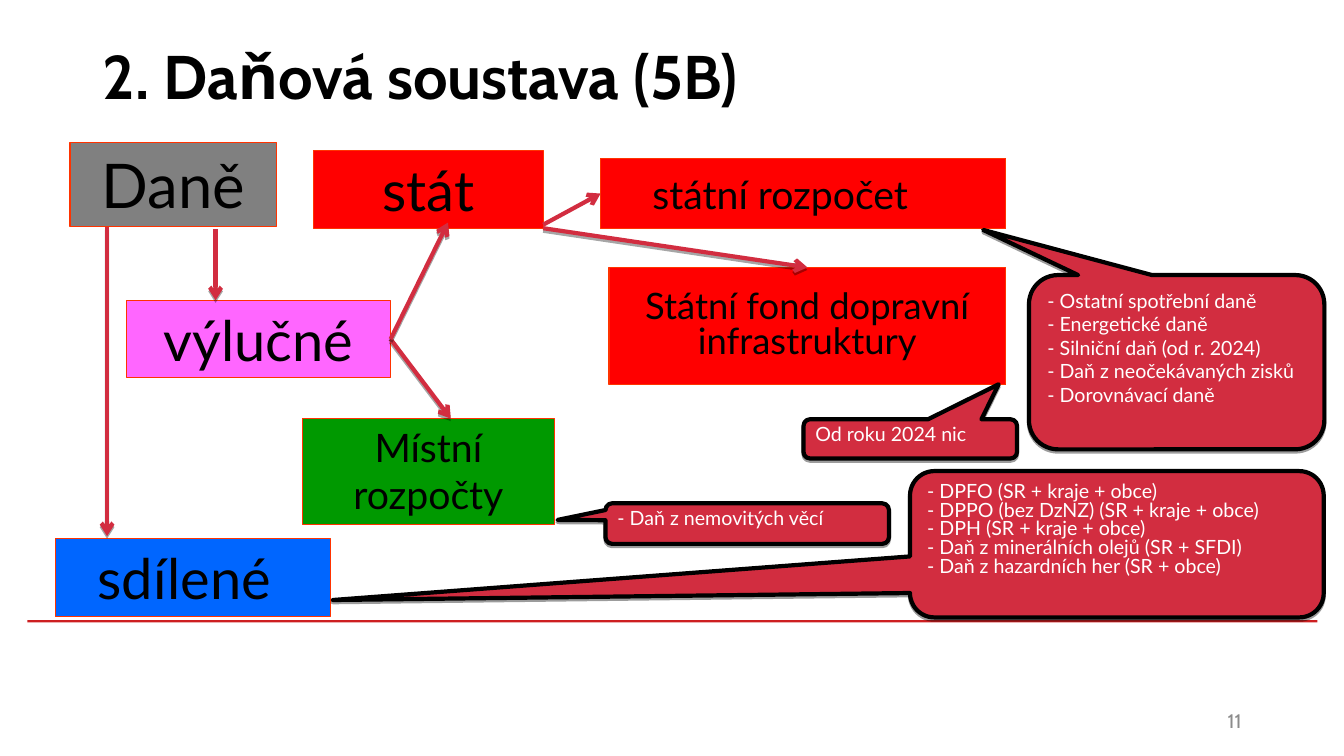
from lxml import etree
from pptx import Presentation
from pptx.dml.color import RGBColor
from pptx.enum import shapes, text
from pptx.oxml.ns import qn
from pptx.util import Pt

BLACK = RGBColor(0, 0, 0)
WHITE = RGBColor(0xFF, 0xFF, 0xFF)
GRAY = RGBColor(0x80, 0x80, 0x80)
PAGE_GRAY = RGBColor(0x8C, 0x8C, 0x8C)
RED = RGBColor(0xFF, 0, 0)
GREEN = RGBColor(0, 0x99, 0)
BLUE = RGBColor(0, 0x66, 0xFF)
PINK = RGBColor(0xFF, 0x66, 0xFF)
ORANGE = RGBColor(0xFF, 0x33, 0)
CRIMSON = RGBColor(0xD2, 0x2D, 0x40)
RULE_RED = RGBColor(0xCD, 0x1F, 0x21)


def add_effects(sp, opacity, dist):
    """Give a shape or connector a downward shadow, or none at opacity 0."""
    effects = etree.SubElement(sp._element.spPr, qn("a:effectLst"))
    if opacity:
        shadow = etree.SubElement(effects, qn("a:outerShdw"), blurRad="0",
                                  dist=str(Pt(dist)), dir="5400000", rotWithShape="0")
        color = etree.SubElement(shadow, qn("a:srgbClr"), val="000000")
        etree.SubElement(color, qn("a:alpha"), val=str(opacity * 1000))


def write(sp, lines, font, size, color, align, spacing=None, anchor=text.MSO_ANCHOR.TOP):
    tf = sp.text_frame
    tf.word_wrap = True
    tf.auto_size = text.MSO_AUTO_SIZE.NONE
    tf.vertical_anchor = anchor
    tf.text = "\n".join(lines)
    for p in tf.paragraphs:
        p.alignment = align
        p.line_spacing = spacing
        p.font.name = font
        p.font.size = Pt(size)
        p.font.color.rgb = color


prs = Presentation()
prs.slide_width, prs.slide_height = Pt(960), Pt(540)
s = prs.slides.add_slide(prs.slide_layouts[5])
LEFT, CENTER, RIGHT = text.PP_ALIGN.LEFT, text.PP_ALIGN.CENTER, text.PP_ALIGN.RIGHT
TOP, MIDDLE = text.MSO_ANCHOR.TOP, text.MSO_ANCHOR.MIDDLE

# Title
title = s.shapes.title
title.left, title.top, title.width, title.height = Pt(66), Pt(1.5), Pt(828), Pt(104.5)
write(title, ["2. Daňová soustava (5B)"], "Cabin", 44, BLACK, LEFT, anchor=MIDDLE)
title.text_frame.paragraphs[0].font.bold = True

# Footer rule and page number
rule = s.shapes.add_shape(shapes.MSO_SHAPE.RECTANGLE, Pt(19.5), Pt(443), Pt(921.5), Pt(1.5))
rule.fill.solid()
rule.fill.fore_color.rgb = RULE_RED
rule.line.fill.background()
rule.shadow.inherit = False
number = s.shapes.add_textbox(Pt(678), Pt(500.5), Pt(216), Pt(29))
write(number, ["11"], "Cabin", 14, PAGE_GRAY, RIGHT, anchor=MIDDLE)

# Tax and budget boxes: label, place, fill, size, right inset, line spacing, anchor
boxes = {}
for label, place, fill, size, inset, spacing, anchor in [
    ("Daně", (50, 101.5, 147.5, 60.5), GRAY, 44, 7.2, None, TOP),
    ("Místní rozpočty", (216, 299, 180, 75.5), GREEN, 28, 7.2, None, TOP),
    ("státní rozpočet", (429, 113, 289.5, 50.5), RED, 28, 40, None, MIDDLE),
    ("stát", (224, 107.5, 164, 56), RED, 40, 7.2, None, TOP),
    ("Státní fond dopravní infrastruktury", (435, 191, 283.5, 84), RED, 26, 7.2, 0.8, MIDDLE),
    ("sdílené", (39.5, 384.5, 196.5, 56), BLUE, 40, 19, None, TOP),
    ("výlučné", (90.5, 214.5, 188.5, 55.5), PINK, 40, 7.2, None, TOP),
]:
    sp = s.shapes.add_shape(shapes.MSO_SHAPE.RECTANGLE, *map(Pt, place))
    sp.fill.solid()
    sp.fill.fore_color.rgb = fill
    sp.line.color.rgb = ORANGE
    sp.line.width = Pt(0.75)
    sp.shadow.inherit = False
    write(sp, [label], "Lato", size, BLACK, CENTER, spacing, anchor)
    sp.text_frame.margin_right = Pt(inset)
    boxes[label] = sp

# Arrows: ends, joined box and side at each end, shadow opacity
exclusive = (boxes["výlučné"], 3)
state_budget = (boxes["státní rozpočet"], 1)
transport_fund = (boxes["Státní fond dopravní infrastruktury"], 0)
for ends, start, end, opacity in [
    ((279, 242.5, 322, 299), exclusive, None, 35),
    ((279, 242.5, 320, 159), exclusive, None, 35),
    ((388, 160.5, 429, 138), None, state_budget, 0),
    ((388, 163, 577, 191), None, transport_fund, 35),
    ((76.5, 162.5, 76.5, 383), None, None, 35),
    ((154, 163.5, 154, 214.5), None, None, 35),
]:
    arrow = s.shapes.add_connector(shapes.MSO_CONNECTOR.STRAIGHT, *map(Pt, ends))
    if start:
        arrow.begin_connect(*start)
    if end:
        arrow.end_connect(*end)
    arrow.line.color.rgb = CRIMSON
    arrow.line.width = Pt(3)
    etree.SubElement(arrow.line._get_or_add_ln(), qn("a:tailEnd"), type="arrow")
    add_effects(arrow, opacity, 1.8)

# Callouts: place, tip, line spacing, lines
for place, tip, spacing, lines in [
    ((735, 196.5, 211, 124.5), (-0.655, -0.759), None,
     ["- Ostatní spotřební daně", "- Energetické daně", "- Silniční daň (od r. 2024)",
      "- Daň z neočekávaných zisků", "- Dorovnávací daně"]),
    ((574, 299.5, 152.5, 28), (0.414, -1.393), 0.8, ["Od roku 2024 nic"]),
    ((432.5, 359.5, 202.5, 29), (-0.669, -0.09), 0.8, ["- Daň z nemovitých věcí"]),
    ((650, 336.5, 295.5, 104.5), (-1.895, 0.381), 0.8,
     ["- DPFO (SR + kraje + obce)", "- DPPO (bez DzNZ) (SR + kraje + obce)",
      "- DPH (SR + kraje + obce)", "- Daň z minerálních olejů (SR + SFDI)",
      "- Daň z hazardních her (SR + obce)"]),
]:
    sp = s.shapes.add_shape(shapes.MSO_SHAPE.ROUNDED_RECTANGULAR_CALLOUT, *map(Pt, place))
    sp.adjustments[0], sp.adjustments[1] = tip
    sp.fill.solid()
    sp.fill.fore_color.rgb = CRIMSON
    sp.line.color.rgb = BLACK
    sp.line.width = Pt(3)
    add_effects(sp, 38, 1.6)
    write(sp, lines, "Lato", 14, WHITE, LEFT, spacing)

prs.save("out.pptx")
